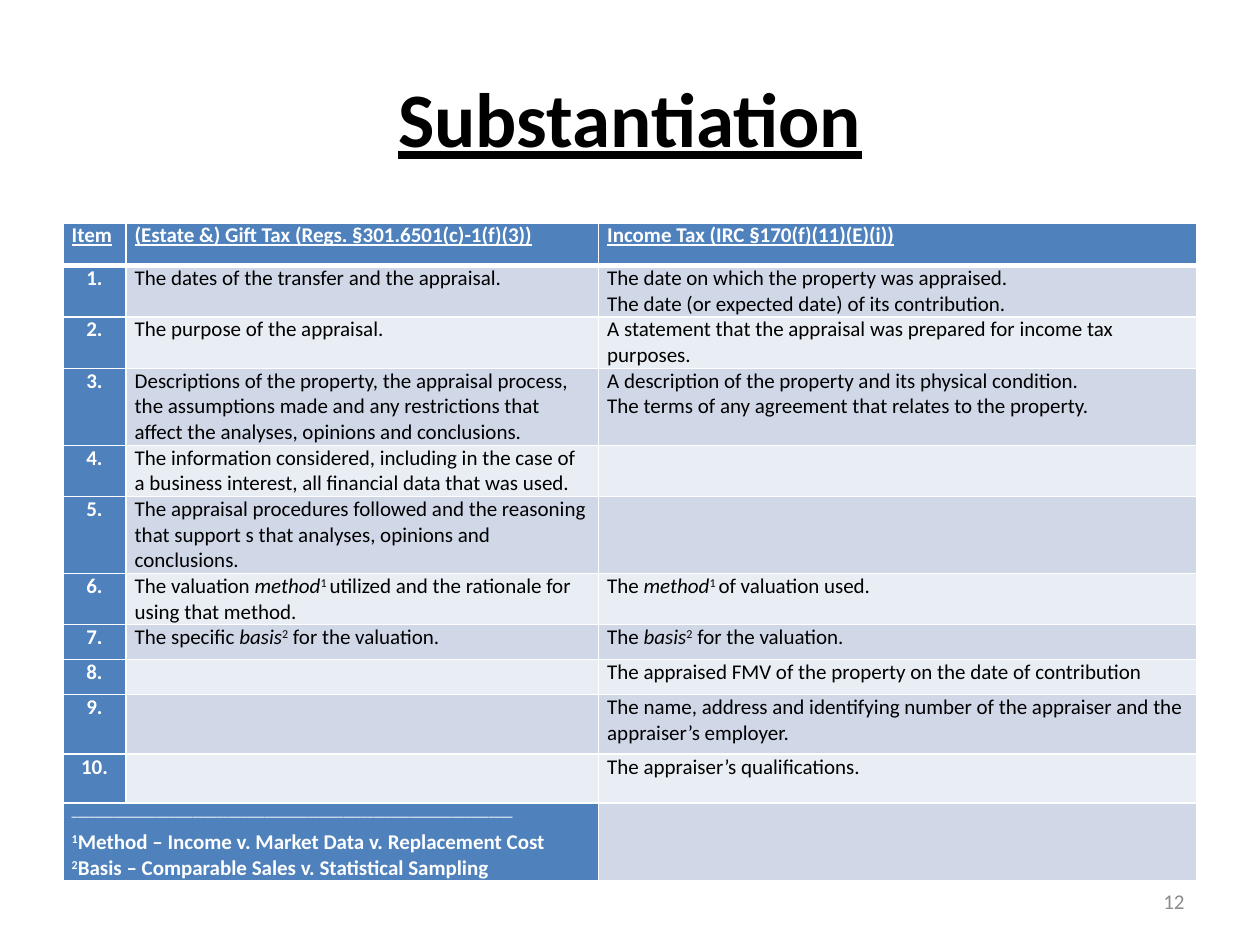
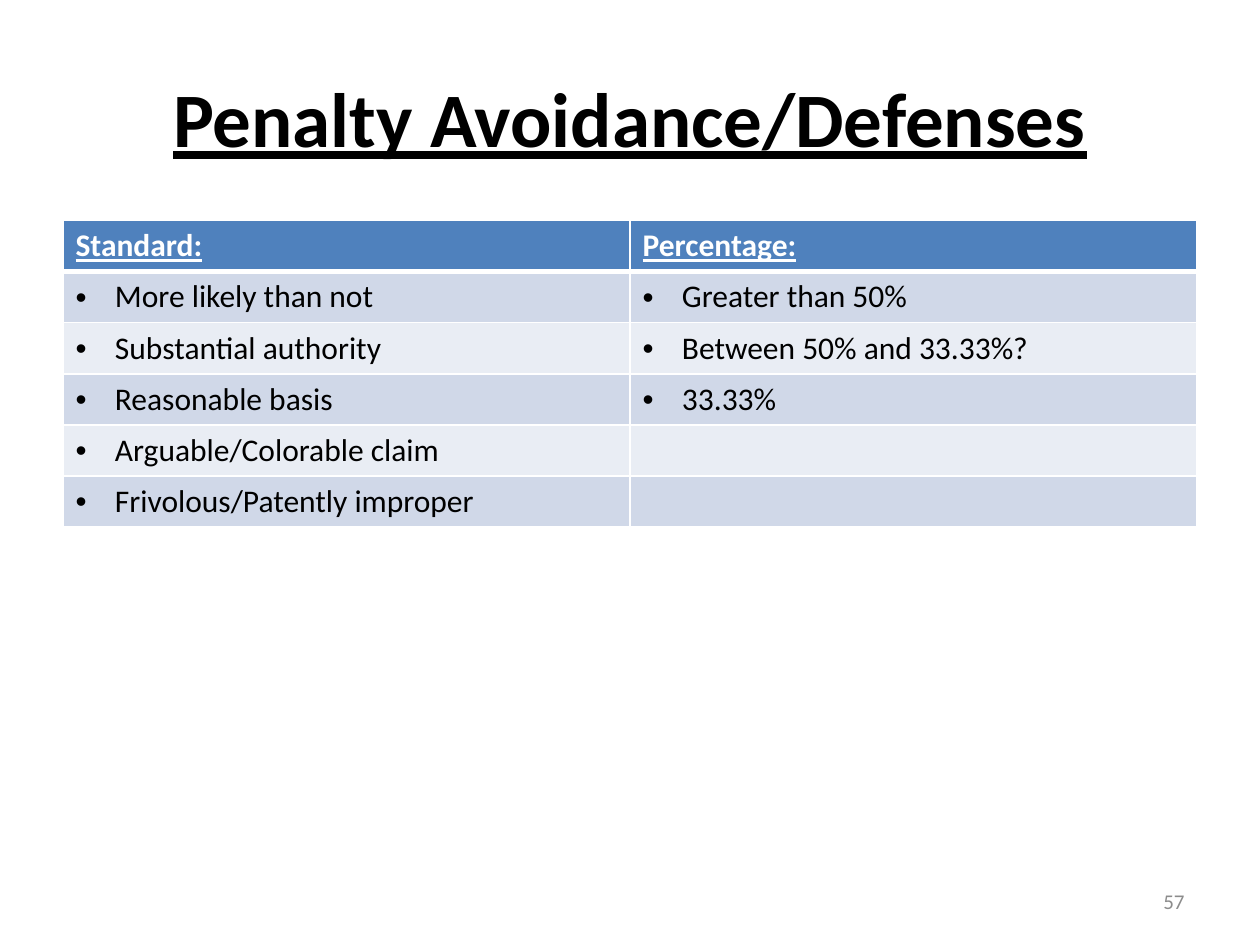
"""Build two tax appraisal slides, each with a title, a table and a page number."""
import lxml.etree
import pptx
import pptx.dml.color
import pptx.enum.text
import pptx.oxml.ns
import pptx.util

Pt = pptx.util.Pt
qn = pptx.oxml.ns.qn
RGBColor = pptx.dml.color.RGBColor
ALIGN = pptx.enum.text.PP_ALIGN

FONT = "Calibri"
BLACK = RGBColor(0x00, 0x00, 0x00)
WHITE = RGBColor(0xFF, 0xFF, 0xFF)
GRAY = RGBColor(0x8C, 0x8C, 0x8C)
BLUE = RGBColor(0x4F, 0x81, 0xBD)
BANDS = (RGBColor(0xE9, 0xED, 0xF4), RGBColor(0xD0, 0xD8, 0xE8))

LEFT, WIDTH = 36, 648
RUN_STYLES = ("plain", "italic", "superscript", "plain")

REQUIREMENTS = [
    (["The dates of the transfer and the appraisal."],
     ["The date on which the property was appraised.",
      "The date (or expected date) of its contribution."]),
    (["The purpose of the appraisal."],
     ["A statement that the appraisal was prepared for income tax purposes."]),
    (["Descriptions of the property, the appraisal process, the assumptions made "
      "and any restrictions that affect the analyses, opinions and conclusions."],
     ["A description of the property and its physical condition.",
      "The terms of any agreement that relates to the property."]),
    (["The information considered, including in the case of a business interest, "
      "all financial data that was used."], []),
    (["The appraisal procedures followed and the reasoning that support s that "
      "analyses, opinions and conclusions."], []),
    (["The valuation |method|1 |utilized and the rationale for using that method."],
     ["The |method|1 |of valuation used."]),
    (["The specific |basis|2| for the valuation."],
     ["The |basis|2| for the valuation."]),
    ([], ["The appraised FMV of the property on the date of contribution"]),
    ([], ["The name, address and identifying number of the appraiser and the "
          "appraiser’s employer."]),
    ([], ["The appraiser’s qualifications."]),
]
REQUIREMENT_HEADERS = ["Item", "(Estate &) Gift Tax (Regs. §301.6501(c)-1(f)(3))",
                       "Income Tax (IRC §170(f)(11)(E)(i))"]
REQUIREMENT_HEIGHTS = [24.5, 29.3, 29.3, 44, 29.3, 44, 29.3, 20, 20, 34, 28, 44.6]
FOOTNOTES = ["||" + "_" * 73,
             "||1|Method – Income v. Market Data v. Replacement Cost",
             "||2|Basis – Comparable Sales v. Statistical Sampling"]

STANDARDS = [
    ("More likely than not", "Greater than 50%"),
    ("Substantial authority", "Between 50% and 33.33%?"),
    ("Reasonable basis", "33.33%"),
    ("Arguable/Colorable claim", ""),
    ("Frivolous/Patently improper", ""),
]


def format_run(run, size, color, bold=False, underline=False):
    run.font.name = FONT
    run.font.size = Pt(size)
    run.font.color.rgb = color
    run.font.bold = bold
    run.font.underline = underline


def add_text(slide, text, box, alignment, size, color, **emphasis):
    shape = slide.shapes.add_textbox(*(Pt(length) for length in box))
    text_frame = shape.text_frame
    text_frame.word_wrap = True
    text_frame.vertical_anchor = pptx.enum.text.MSO_ANCHOR.MIDDLE
    text_frame.text = text
    paragraph = text_frame.paragraphs[0]
    paragraph.alignment = alignment
    format_run(paragraph.runs[0], size, color, **emphasis)


def add_titled_slide(presentation, title, page_number):
    slide = presentation.slides.add_slide(presentation.slide_layouts[6])
    add_text(slide, title, (LEFT, 21.6, WIDTH, 90), ALIGN.CENTER, 44, BLACK,
             bold=True, underline=True)
    add_text(slide, page_number, (516, 500.4, 168, 28.8), ALIGN.RIGHT, 12, GRAY)
    return slide


def set_borders(cell, top, bottom):
    properties = cell._tc.get_or_add_tcPr()
    for side, width in (("L", 1), ("R", 1), ("T", top), ("B", bottom)):
        line = lxml.etree.SubElement(properties, qn(f"a:ln{side}"), w=str(Pt(width)))
        fill = lxml.etree.SubElement(line, qn("a:solidFill"))
        lxml.etree.SubElement(fill, qn("a:srgbClr"), val=str(WHITE))


def fill_cell(cell, color):
    cell.fill.solid()
    cell.fill.fore_color.rgb = color


def add_banded_table(slide, top, widths, heights):
    shape = slide.shapes.add_table(len(heights), len(widths), Pt(LEFT), Pt(top),
                                   Pt(WIDTH), Pt(sum(heights)))
    table = shape.table
    for column, width in zip(table.columns, widths):
        column.width = Pt(width)
    for index, (row, height) in enumerate(zip(table.rows, heights)):
        row.height = Pt(height)
        for cell in row.cells:
            set_borders(cell, 3 if index == 1 else 1, 3 if index == 0 else 1)
            fill_cell(cell, BANDS[index % 2] if index else BLUE)
    return table


def write_cell(cell, lines, size, color, **emphasis):
    """Write one paragraph per line, with its pieces parted by bars."""
    for index, line in enumerate(lines):
        text_frame = cell.text_frame
        paragraph = text_frame.add_paragraph() if index else text_frame.paragraphs[0]
        for piece, style in zip(line.split("|"), RUN_STYLES):
            if not piece:
                continue
            run = paragraph.add_run()
            run.text = piece
            format_run(run, size, color, **emphasis)
            run.font.italic = style == "italic"
            if style == "superscript":
                run.font._element.set("baseline", "30000")
    if not lines:
        paragraph = cell.text_frame.paragraphs[0]
        lxml.etree.SubElement(paragraph._p, qn("a:endParaRPr"), sz=str(size * 100))


def write_header(table, headers, size):
    for cell, header in zip(table.rows[0].cells, headers):
        write_cell(cell, [header], size, WHITE, bold=True, underline=True)


def add_bullet(paragraph):
    properties = paragraph._p.get_or_add_pPr()
    properties.set("marL", str(Pt(22.5)))
    properties.set("indent", str(-Pt(22.5)))
    lxml.etree.SubElement(properties, qn("a:buFont"), typeface="Arial")
    lxml.etree.SubElement(properties, qn("a:buChar"), char="•")


def write_footnotes(table):
    row = len(table.rows) - 1
    cell = table.cell(row, 0)
    cell.merge(table.cell(row, 1))
    fill_cell(cell, BLUE)
    write_cell(cell, FOOTNOTES, 12, WHITE, bold=True)
    for paragraph in cell.text_frame.paragraphs:
        paragraph.space_before = Pt(3)
    for paragraph in cell.text_frame.paragraphs[1:]:
        paragraph.line_spacing = Pt(12)
    write_cell(table.cell(row, 2), [], 12, BLACK)


def build_substantiation(presentation):
    slide = add_titled_slide(presentation, "Substantiation", "12")
    table = add_banded_table(slide, 127.4, (36, 270, 342), REQUIREMENT_HEIGHTS)
    for cell in table.iter_cells():
        cell.margin_left = cell.margin_right = Pt(5)
        cell.margin_top = cell.margin_bottom = 0
    write_header(table, REQUIREMENT_HEADERS, 12)
    for number, (gift_tax, income_tax) in enumerate(REQUIREMENTS, 1):
        item = table.cell(number, 0)
        fill_cell(item, BLUE)
        write_cell(item, [f"{number}."], 12, WHITE, bold=True)
        item.text_frame.paragraphs[0].alignment = ALIGN.CENTER
        write_cell(table.cell(number, 1), gift_tax, 12, BLACK)
        write_cell(table.cell(number, 2), income_tax, 12, BLACK)
    write_footnotes(table)


def build_penalty_defenses(presentation):
    slide = add_titled_slide(presentation, "Penalty Avoidance/Defenses", "57")
    table = add_banded_table(slide, 126, (WIDTH / 2,) * 2, [29.2] * (len(STANDARDS) + 1))
    write_header(table, ("Standard:", "Percentage:"), 18)
    for row, texts in enumerate(STANDARDS, 1):
        for column, text in enumerate(texts):
            if text:
                cell = table.cell(row, column)
                write_cell(cell, [text], 18, BLACK)
                add_bullet(cell.text_frame.paragraphs[0])


def main():
    presentation = pptx.Presentation()
    presentation.slide_width = Pt(720)
    presentation.slide_height = Pt(540)
    build_substantiation(presentation)
    build_penalty_defenses(presentation)
    presentation.save("out.pptx")


if __name__ == "__main__":
    main()
